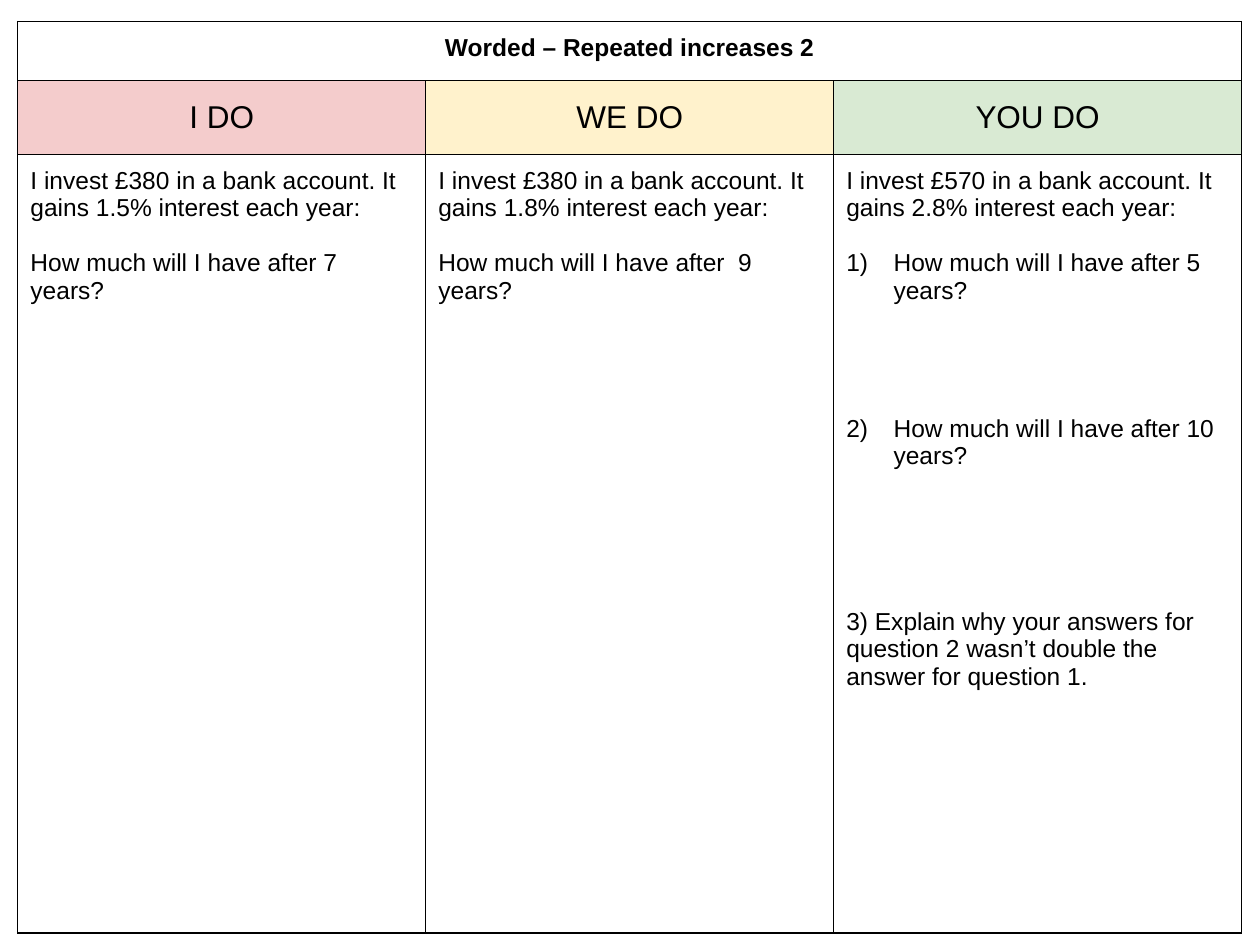
from pptx import Presentation
from pptx.dml.color import RGBColor
from pptx.enum.text import MSO_ANCHOR as Anchor, PP_ALIGN as Align
from pptx.oxml.xmlchemy import OxmlElement
from pptx.util import Pt

BLACK = RGBColor(0x00, 0x00, 0x00)
WHITE = RGBColor(0xFF, 0xFF, 0xFF)
PINK = RGBColor(0xF4, 0xCC, 0xCC)
CREAM = RGBColor(0xFF, 0xF2, 0xCC)
GREEN = RGBColor(0xD9, 0xEA, 0xD3)

LINE = 15.75  # height of one line of body text
COLUMN_WIDTH = 233.1
ROW_HEIGHTS = (34, 42, 445)


def write(paragraph, text, size=14, bold=False, align=Align.LEFT, before=0, numbered=False):
    """Write one formatted paragraph, optionally as a numbered item."""
    paragraph.alignment = align
    paragraph.space_before = Pt(before)
    run = paragraph.add_run()
    run.text = text
    font = run.font
    font.name, font.size, font.bold = "Arial", Pt(size), bold
    font.color.rgb = BLACK
    if numbered:
        properties = paragraph._p.get_or_add_pPr()
        properties.set("marL", str(Pt(27)))
        properties.set("indent", str(Pt(-27)))
        number = OxmlElement("a:buAutoNum")
        number.set("type", "arabicParenR")
        properties.append(number)


class LessonSlide:
    """Holds the table style and the slide being built."""

    margin = 7.2
    border_width = 0.75
    border_color = BLACK

    def __init__(self, presentation):
        self.slide = presentation.slides.add_slide(presentation.slide_layouts[6])

    def table(self, left, top, column_widths, row_heights):
        frame = self.slide.shapes.add_table(
            len(row_heights), len(column_widths), Pt(left), Pt(top),
            Pt(sum(column_widths)), Pt(sum(row_heights)))
        table = frame.table
        table.first_row = table.horz_banding = False
        for column, width in zip(table.columns, column_widths):
            column.width = Pt(width)
        for row, height in zip(table.rows, row_heights):
            row.height = Pt(height)
        for cell in table.iter_cells():
            self.borders(cell)
        return table

    def borders(self, cell):
        properties = cell._tc.get_or_add_tcPr()
        for side in ("lnL", "lnR", "lnT", "lnB"):
            line = OxmlElement(f"a:{side}")
            line.set("w", str(Pt(self.border_width)))
            fill = OxmlElement("a:solidFill")
            color = OxmlElement("a:srgbClr")
            color.set("val", str(self.border_color))
            fill.append(color)
            line.append(fill)
            properties.append(line)

    def cell(self, cell, paragraphs, fill=WHITE, anchor=Anchor.TOP):
        cell.fill.solid()
        cell.fill.fore_color.rgb = fill
        cell.vertical_anchor = anchor
        cell.margin_left = cell.margin_right = Pt(self.margin)
        cell.margin_top = cell.margin_bottom = Pt(self.margin)
        frame = cell.text_frame
        for index, (text, options) in enumerate(paragraphs):
            paragraph = frame.add_paragraph() if index else frame.paragraphs[0]
            write(paragraph, text, **options)


def investment(amount, rate):
    return f"I invest £{amount} in a bank account. It gains {rate}% interest each year:", {}


def question(years, gap=1, numbered=False):
    return f"How much will I have after {years} years?", {"before": gap * LINE, "numbered": numbered}


def main():
    presentation = Presentation()
    presentation.slide_width, presentation.slide_height = Pt(720), Pt(540)
    lesson = LessonSlide(presentation)
    table = lesson.table(10.2, 12.2, [COLUMN_WIDTH] * 3, ROW_HEIGHTS)

    # Title across all columns
    table.cell(0, 0).merge(table.cell(0, 2))
    lesson.cell(table.cell(0, 0), [
        ("Worded – Repeated increases 2", {"bold": True, "align": Align.CENTER})])

    # Column heading, its colour and the work below it
    explanation = "3) Explain why your answers for question 2 wasn’t double the answer for question 1."
    columns = [
        ("I DO", PINK, [investment(380, 1.5), question("7")]),
        ("WE DO", CREAM, [investment(380, 1.8), question(" 9")]),
        ("YOU DO", GREEN, [
            investment(570, 2.8),
            question("5", numbered=True),
            question("10", gap=4, numbered=True),
            (explanation, {"before": 5 * LINE}),
        ]),
    ]
    for index, (heading, color, work) in enumerate(columns):
        lesson.cell(table.cell(1, index), [(heading, {"size": 18, "align": Align.CENTER})],
                    fill=color, anchor=Anchor.MIDDLE)
        lesson.cell(table.cell(2, index), work)

    presentation.save("out.pptx")


if __name__ == "__main__":
    main()
